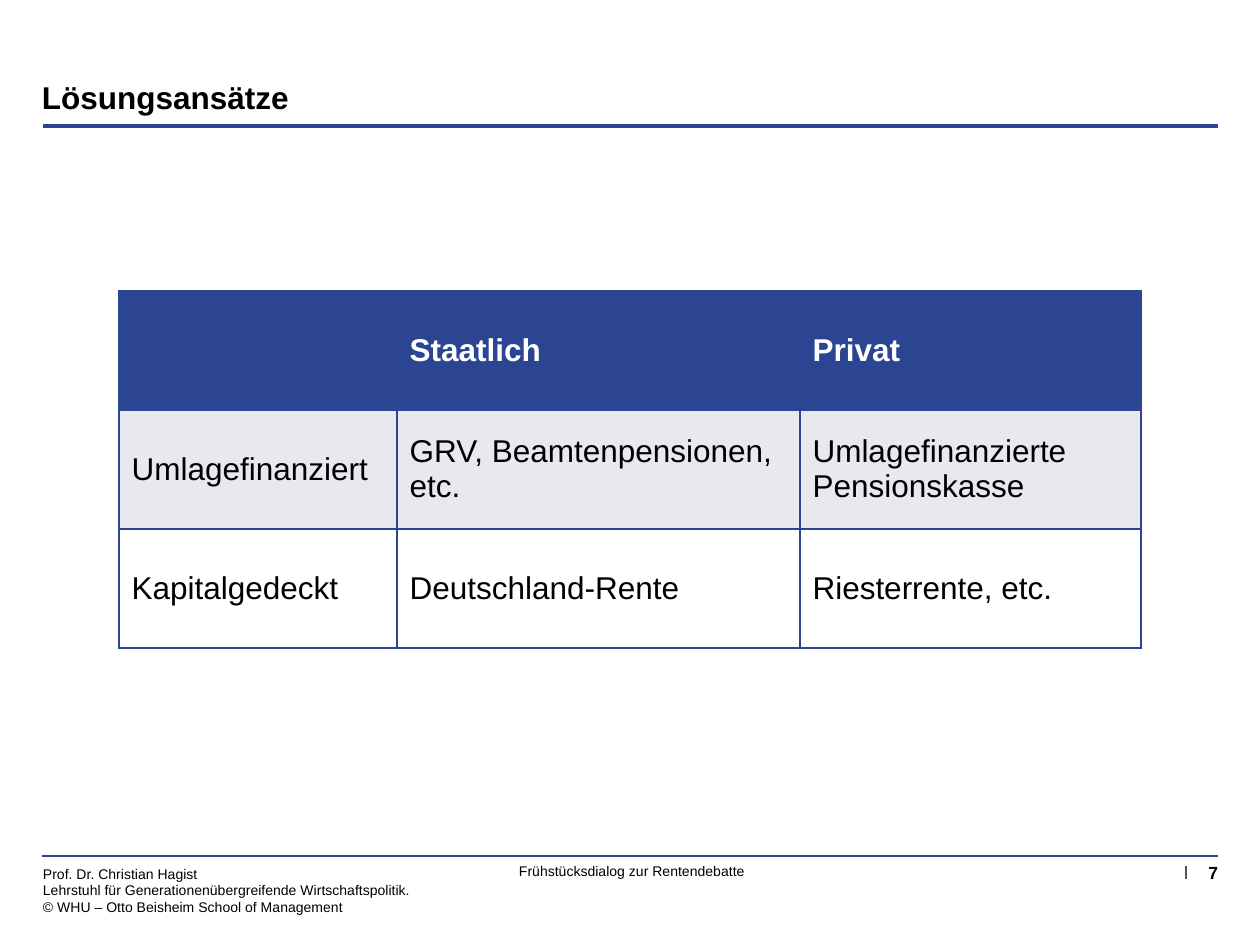
import pptx
import pptx.dml.color
import pptx.enum.shapes
import pptx.enum.text
import pptx.oxml
import pptx.oxml.ns
import pptx.util

BLUE = pptx.dml.color.RGBColor(0x2C, 0x45, 0x92)
GREY = pptx.dml.color.RGBColor(0x51, 0x52, 0x56)
BAND = pptx.dml.color.RGBColor(0xE8, 0xE9, 0xEE)
BLACK = pptx.dml.color.RGBColor(0, 0, 0)
WHITE = pptx.dml.color.RGBColor(255, 255, 255)
ALIGN = pptx.enum.text.PP_ALIGN
ANCHOR = pptx.enum.text.MSO_ANCHOR

ROWS = [
    ["", "Staatlich", "Privat"],
    ["Umlagefinanziert", "GRV, Beamtenpensionen, etc.", "Umlagefinanzierte Pensionskasse"],
    ["Kapitalgedeckt", "Deutschland-Rente", "Riesterrente, etc."],
]
ROW_STYLES = [(BLUE, WHITE, True), (BAND, BLACK, False), (WHITE, BLACK, False)]
FOOTER = """Prof. Dr. Christian Hagist
Lehrstuhl für Generationenübergreifende Wirtschaftspolitik.
© WHU – Otto Beisheim School of Management"""


def px(n):
    return pptx.util.Emu(round(n * 914400 / 126))


class SlideBuilder:
    """Draws styled elements on one slide, with lengths in px."""

    font = "Arial"

    def __init__(self, prs):
        self.slide = prs.slides.add_slide(prs.slide_layouts[6])

    def style(self, tf, size, color, bold, align=ALIGN.LEFT):
        for p in tf.paragraphs:
            p.alignment = align
            for r in p.runs:
                r.font.name = self.font
                r.font.size = pptx.util.Pt(size)
                r.font.bold = bold
                r.font.color.rgb = color

    def text(self, text, x, y, w, h, size, bold=False, align=ALIGN.LEFT,
             inset=10, anchor=ANCHOR.TOP, wrap=True):
        tf = self.slide.shapes.add_textbox(px(x), px(y), px(w), px(h)).text_frame
        tf.margin_left = tf.margin_right = tf.margin_top = tf.margin_bottom = px(inset)
        tf.word_wrap = wrap
        tf.vertical_anchor = anchor
        tf.text = text
        self.style(tf, size, BLACK, bold, align)

    def line(self, x1, y1, x2, y2, color, width):
        s = self.slide.shapes.add_connector(
            pptx.enum.shapes.MSO_CONNECTOR.STRAIGHT, px(x1), px(y1), px(x2), px(y2))
        s.line.color.rgb = color
        s.line.width = pptx.util.Pt(width)
        s._element.spPr.append(pptx.oxml.parse_xml(
            f"<a:effectLst {pptx.oxml.ns.nsdecls('a')}/>"))

    def border(self, cell, color, width):
        tcPr = cell._tc.get_or_add_tcPr()
        for side in "LRTB":
            tcPr.append(pptx.oxml.parse_xml(
                f"<a:ln{side} {pptx.oxml.ns.nsdecls('a')} w='{pptx.util.Pt(width)}'>"
                f"<a:solidFill><a:srgbClr val='{color}'/></a:solidFill></a:ln{side}>"))

    def table(self, rows, styles, x, y, widths, row_height):
        table = self.slide.shapes.add_table(
            len(rows), len(widths), px(x), px(y),
            px(sum(widths)), px(row_height * len(rows))).table
        for column, width in zip(table.columns, widths):
            column.width = px(width)
        for row, texts, (fill, color, bold) in zip(table.rows, rows, styles):
            row.height = px(row_height)
            for cell, text in zip(row.cells, texts):
                cell.text = text
                cell.vertical_anchor = ANCHOR.MIDDLE
                self.style(cell.text_frame, 18, color, bold)
                self.border(cell, BLUE, 1)
                cell.fill.solid()
                cell.fill.fore_color.rgb = fill


def main():
    prs = pptx.Presentation()
    prs.slide_width, prs.slide_height = px(1260), px(945)
    s = SlideBuilder(prs)
    s.text(FOOTER, 33, 855, 392, 70, 8, wrap=False)
    s.text("Frühstücksdialog zur Rentendebatte", 458, 854, 348, 35, 8,
           align=ALIGN.CENTER, wrap=False)
    s.line(42, 856, 1218, 856, BLUE, 0.75)
    s.line(43, 126, 1218, 126, BLUE, 2.25)
    s.text("7", 1116, 852, 112, 37, 10, bold=True, align=ALIGN.RIGHT)
    s.line(1186, 866, 1186, 879, GREY, 0.75)
    s.text("Lösungsansätze", 42, 30, 956, 86, 18, bold=True, inset=0, anchor=ANCHOR.BOTTOM)
    s.table(ROWS, ROW_STYLES, 119, 291, [278, 403, 341], 119)
    prs.save("out.pptx")


if __name__ == "__main__":
    main()
